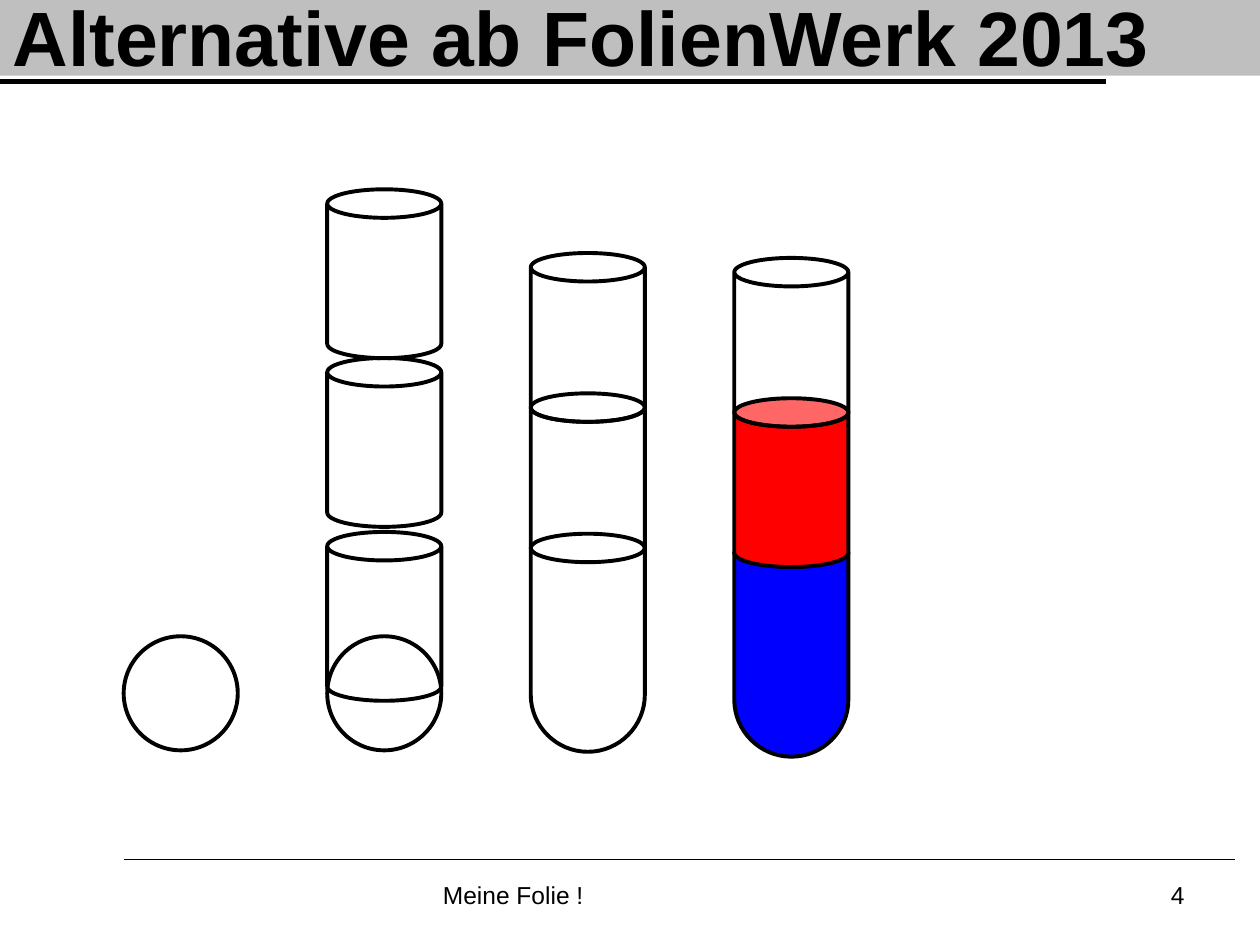
"""Build a slide that assembles test tubes from circles, cans and round-bottomed outlines."""
from dataclasses import dataclass
from typing import Optional

from lxml.etree import SubElement
from pptx import Presentation
from pptx.dml.color import RGBColor
from pptx.enum.shapes import MSO_CONNECTOR as Connector, MSO_SHAPE as Shape
from pptx.enum.text import MSO_ANCHOR as Anchor, MSO_AUTO_SIZE as AutoSize, PP_ALIGN as Align
from pptx.oxml.ns import qn
from pptx.util import Pt

COLORS = {"black": "000000", "grey": "BFBFBF", "red": "FF0000", "blue": "0000FF"}
FONT = "Arial"
DIAMETER = 65.2
CAN_HEIGHT = 96.5
TUBE_HEIGHT = 124.6
LID_HEIGHT = DIAMETER / 4
STACK_STEP = CAN_HEIGHT - LID_HEIGHT
CURVE_RATIO = 0.55
COLUMNS = [70.7 + 116.3 * index for index in range(4)]


@dataclass
class Part:
    kind: Shape
    left: float
    top: float
    height: float
    fill: Optional[str] = None


@dataclass
class Tube:
    left: float
    top: float
    bottom_fill: Optional[str] = None
    middle_fill: Optional[str] = None


@dataclass
class Rule:
    left: float
    right: float
    y: float
    weight: float


@dataclass
class Label:
    text: str
    left: float
    width: float
    align: Align


RULES = [Rule(-2.9, 632, 46.6, 3), Rule(70.8, 705.6, 491.2, 1)]
LABELS = [
    Label("Meine Folie !", 246, 228, Align.LEFT),
    Label("4", 516, 168, Align.RIGHT),
]
PARTS = [
    Part(Shape.OVAL, COLUMNS[1], 363.6, DIAMETER),
    Part(Shape.CAN, COLUMNS[1], 304, CAN_HEIGHT),
    Part(Shape.CAN, COLUMNS[1], 204.6, CAN_HEIGHT),
    Part(Shape.OVAL, COLUMNS[0], 363.6, DIAMETER),
    Part(Shape.CAN, COLUMNS[1], 108.2, CAN_HEIGHT),
]
TUBES = [Tube(COLUMNS[2], 305), Tube(COLUMNS[3], 307.8, "blue", "red")]


def color(name: str) -> RGBColor:
    """Return the named colour."""
    return RGBColor.from_string(COLORS[name])


def style_shape(shape, fill: Optional[str]) -> None:
    """Give a shape its fill and black outline."""
    shape.shadow.inherit = False
    if fill:
        shape.fill.solid()
        shape.fill.fore_color.rgb = color(fill)
    else:
        shape.fill.background()
    shape.line.color.rgb = color("black")
    shape.line.width = Pt(2.25)


def write_text(frame, text: str, size: float, align: Align, bold: bool = False) -> None:
    """Write one run into a text frame."""
    frame.word_wrap = True
    frame.auto_size = AutoSize.NONE
    paragraph = frame.paragraphs[0]
    paragraph.alignment = align
    run = paragraph.add_run()
    run.text = text
    run.font.name = FONT
    run.font.size = Pt(size)
    run.font.bold = bold
    run.font.color.rgb = color("black")


def draw_title(slide, text: str) -> None:
    """Place the title on its grey band."""
    title = slide.shapes.title
    title.left, title.top, title.width, title.height = Pt(0), Pt(-2), Pt(720), Pt(45.2)
    title.fill.solid()
    title.fill.fore_color.rgb = color("grey")
    title.text_frame.vertical_anchor = Anchor.MIDDLE
    write_text(title.text_frame, text, 44, Align.LEFT, bold=True)


def draw_rule(slide, rule: Rule) -> None:
    """Draw a horizontal rule."""
    line = slide.shapes.add_connector(
        Connector.STRAIGHT, Pt(rule.left), Pt(rule.y), Pt(rule.right), Pt(rule.y))
    line.line.color.rgb = color("black")
    line.line.width = Pt(rule.weight)
    SubElement(line._element.spPr, qn("a:effectLst"))


def draw_label(slide, label: Label) -> None:
    """Draw a footer text."""
    box = slide.shapes.add_textbox(Pt(label.left), Pt(499.3), Pt(label.width), Pt(37.5))
    write_text(box.text_frame, label.text, 14, label.align)


def draw_part(slide, part: Part) -> None:
    """Draw a circle or a can."""
    shape = slide.shapes.add_shape(
        part.kind, Pt(part.left), Pt(part.top), Pt(DIAMETER), Pt(part.height))
    style_shape(shape, part.fill)


def round_corners(shape) -> None:
    """Turn the slanted segments of an outline into quarter ellipses."""
    outline = next(shape._element.iter(qn("a:moveTo"))).getparent()
    ends = [(int(point.get("x")), int(point.get("y"))) for point in outline.iter(qn("a:pt"))]
    segments = outline.findall(qn("a:lnTo"))
    for index, (segment, (x0, y0), (x1, y1)) in enumerate(zip(segments, ends, ends[1:])):
        if x0 == x1:
            continue
        near_x, near_y = x0 + CURVE_RATIO * (x1 - x0), y0 + CURVE_RATIO * (y1 - y0)
        far_x, far_y = x0 + x1 - near_x, y0 + y1 - near_y
        starts_level = index in (0, 3)
        controls = [(near_x, y0), (x1, far_y)] if starts_level else [(x0, near_y), (far_x, y1)]
        curve = SubElement(outline, qn("a:cubicBezTo"))
        for x, y in controls + [(x1, y1)]:
            SubElement(curve, qn("a:pt"), x=str(round(x)), y=str(round(y)))
        outline.replace(segment, curve)


def draw_tube_bottom(slide, tube: Tube) -> None:
    """Draw a body with a domed lid edge and a round bottom."""
    radius = DIAMETER / 2
    middle, right = tube.left + radius, tube.left + DIAMETER
    shoulder, bottom = tube.top + LID_HEIGHT / 2, tube.top + TUBE_HEIGHT
    corners = [
        (middle, tube.top), (right, shoulder), (right, bottom - radius),
        (middle, bottom), (tube.left, bottom - radius), (tube.left, shoulder),
        (middle, tube.top),
    ]
    points = [(Pt(x), Pt(y)) for x, y in corners]
    builder = slide.shapes.build_freeform(*points[0])
    builder.add_line_segments(points[1:], close=True)
    shape = builder.convert_to_shape()
    round_corners(shape)
    style_shape(shape, tube.bottom_fill)


def draw_tube(slide, tube: Tube) -> None:
    """Stack two cans on a round bottom."""
    draw_tube_bottom(slide, tube)
    for level, fill in enumerate((tube.middle_fill, None), start=1):
        top = tube.top - level * STACK_STEP
        draw_part(slide, Part(Shape.CAN, tube.left, top, CAN_HEIGHT, fill))


def main() -> None:
    """Build and save the presentation."""
    presentation = Presentation()
    presentation.slide_width, presentation.slide_height = Pt(720), Pt(540)
    slide = presentation.slides.add_slide(presentation.slide_layouts[5])
    draw_title(slide, "Alternative ab FolienWerk 2013")
    for rule in RULES:
        draw_rule(slide, rule)
    for label in LABELS:
        draw_label(slide, label)
    for part in PARTS:
        draw_part(slide, part)
    for tube in TUBES:
        draw_tube(slide, tube)
    presentation.save("out.pptx")


if __name__ == "__main__":
    main()
